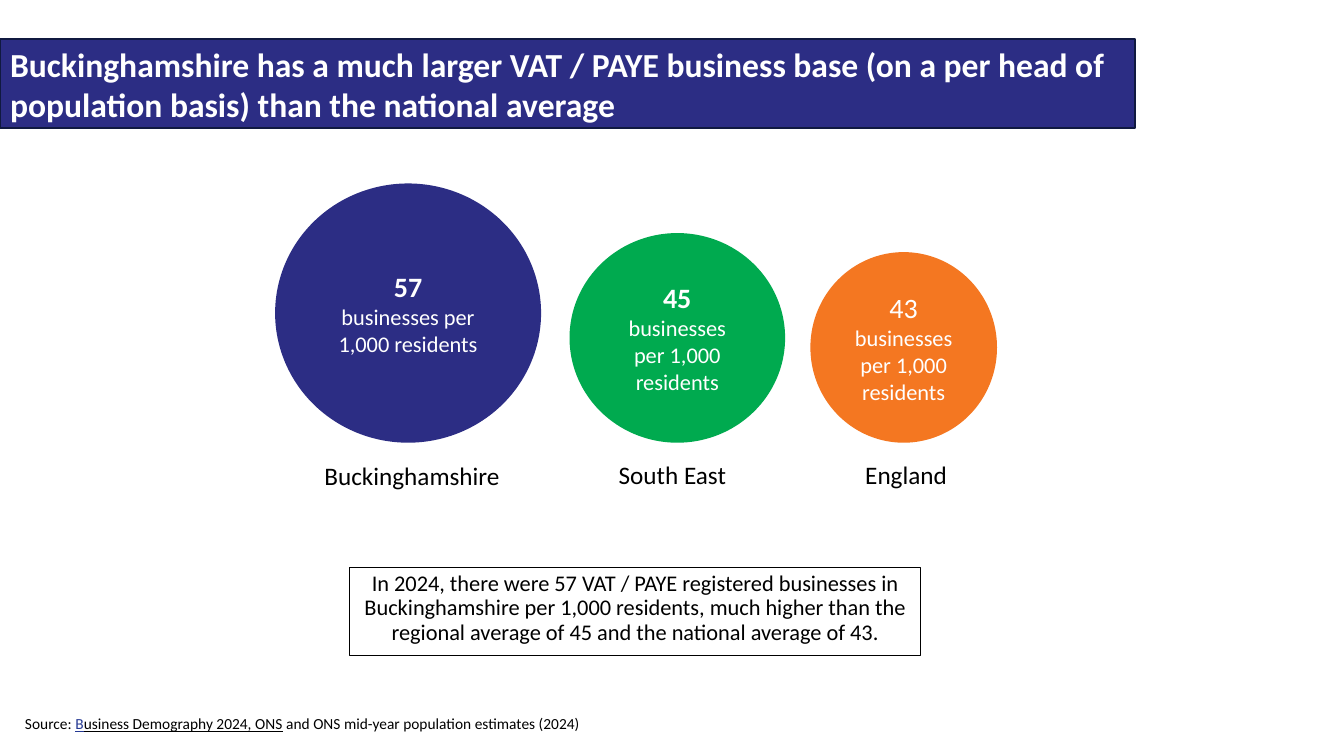
"""Build the slide comparing business density in Buckinghamshire, its region and England."""
from pptx import Presentation
from pptx.dml.color import RGBColor
from pptx.enum.shapes import MSO_SHAPE as SHAPE
from pptx.enum.text import MSO_ANCHOR as ANCHOR, MSO_AUTO_SIZE as AUTO, PP_ALIGN as ALIGN
from pptx.util import Cm, Pt

NAVY, WHITE, BLACK = "2C2D84", "FFFFFF", "000000"
TITLE = ("Buckinghamshire has a much larger VAT / PAYE business base "
         "(on a per head of population basis) than the national average")
NOTE = ("In 2024, there were 57 VAT / PAYE registered businesses in Buckinghamshire "
        "per 1,000 residents, much higher than the regional average of 45 "
        "and the national average of 43.")
UNIT = "businesses per 1,000 residents"
SOURCE = [
    ("Source: ", BLACK, False),
    ("B", "253993", True),
    ("usiness Demography 2024, ONS", BLACK, True),
    (" and ONS mid-year population estimates (2024)", BLACK, False),
]
AREAS = [
    dict(name="Buckinghamshire", value="57", bold=True, color=NAVY,
         left=6.96, width=6.65, height=6.48, label=(7.72, 11.48, 5.33, 1.02)),
    dict(name="South East", value="45", bold=True, color="00AA4F",
         left=14.38, width=5.38, height=5.23, label=(14.38, 11.46, 5.13, 1.02)),
    dict(name="England", value="43", bold=False, color="F47721",
         left=20.45, width=4.65, height=4.75, label=(19.76, 11.46, 6.15, 1.02)),
]
BASELINE = 11.13


def rgb(value):
    return RGBColor.from_string(value)


def box(*lengths):
    return [Cm(v) for v in lengths]


def add_run(p, text, size, color=BLACK, **formats):
    r = p.add_run()
    r.text = text
    r.font.color.rgb = rgb(color)
    for key, value in dict(name="Calibri", size=Pt(size), **formats).items():
        setattr(r.font, key, value)


def set_frame(shape, anchor=ANCHOR.TOP, align=ALIGN.LEFT):
    tf = shape.text_frame
    for key, value in dict(word_wrap=True, auto_size=AUTO.NONE, vertical_anchor=anchor).items():
        setattr(tf, key, value)
    tf.paragraphs[0].alignment = align
    return tf


def paint(shape, fill, line, width):
    if fill:
        shape.fill.solid()
        shape.fill.fore_color.rgb = rgb(fill)
    else:
        shape.fill.background()
    shape.line.color.rgb = rgb(line)
    shape.line.width = Pt(width)


def add_area(s, area):
    top = BASELINE - area["height"]
    circle = s.shapes.add_shape(
        SHAPE.OVAL, *box(area["left"], top, area["width"], area["height"]))
    circle.shadow.inherit = False
    paint(circle, area["color"], area["color"], 1.5)
    tf = set_frame(circle, ANCHOR.MIDDLE, ALIGN.CENTER)
    add_run(tf.paragraphs[0], area["value"], 20, WHITE, bold=area["bold"])
    p = tf.add_paragraph()
    p.alignment = ALIGN.CENTER
    add_run(p, UNIT, 16, WHITE)

    label = s.shapes.add_textbox(*box(*area["label"]))
    add_run(set_frame(label, align=ALIGN.CENTER).paragraphs[0], area["name"], 18)


def main():
    prs = Presentation()
    prs.slide_width, prs.slide_height = box(33.87, 19.05)
    s = prs.slides.add_slide(prs.slide_layouts[5])

    title = s.shapes.title
    title.left, title.top, title.width, title.height = box(0, 0.99, 28.6, 2.24)
    paint(title, NAVY, "101940", 1.5)
    add_run(set_frame(title, ANCHOR.MIDDLE).paragraphs[0], TITLE, 24, WHITE, bold=True)

    for area in AREAS:
        add_area(s, area)

    note = s.shapes.add_textbox(*box(8.81, 14.3, 14.4, 2.21))
    paint(note, None, BLACK, 0.75)
    p = set_frame(note, align=ALIGN.CENTER).paragraphs[0]
    p.line_spacing = 0.9
    add_run(p, NOTE, 16)

    source = s.shapes.add_textbox(*box(0.38, 17.88, 31.27, 0.74))
    p = set_frame(source).paragraphs[0]
    for text, color, underline in SOURCE:
        add_run(p, text, 11, color, underline=underline)

    prs.save("out.pptx")


if __name__ == "__main__":
    main()
